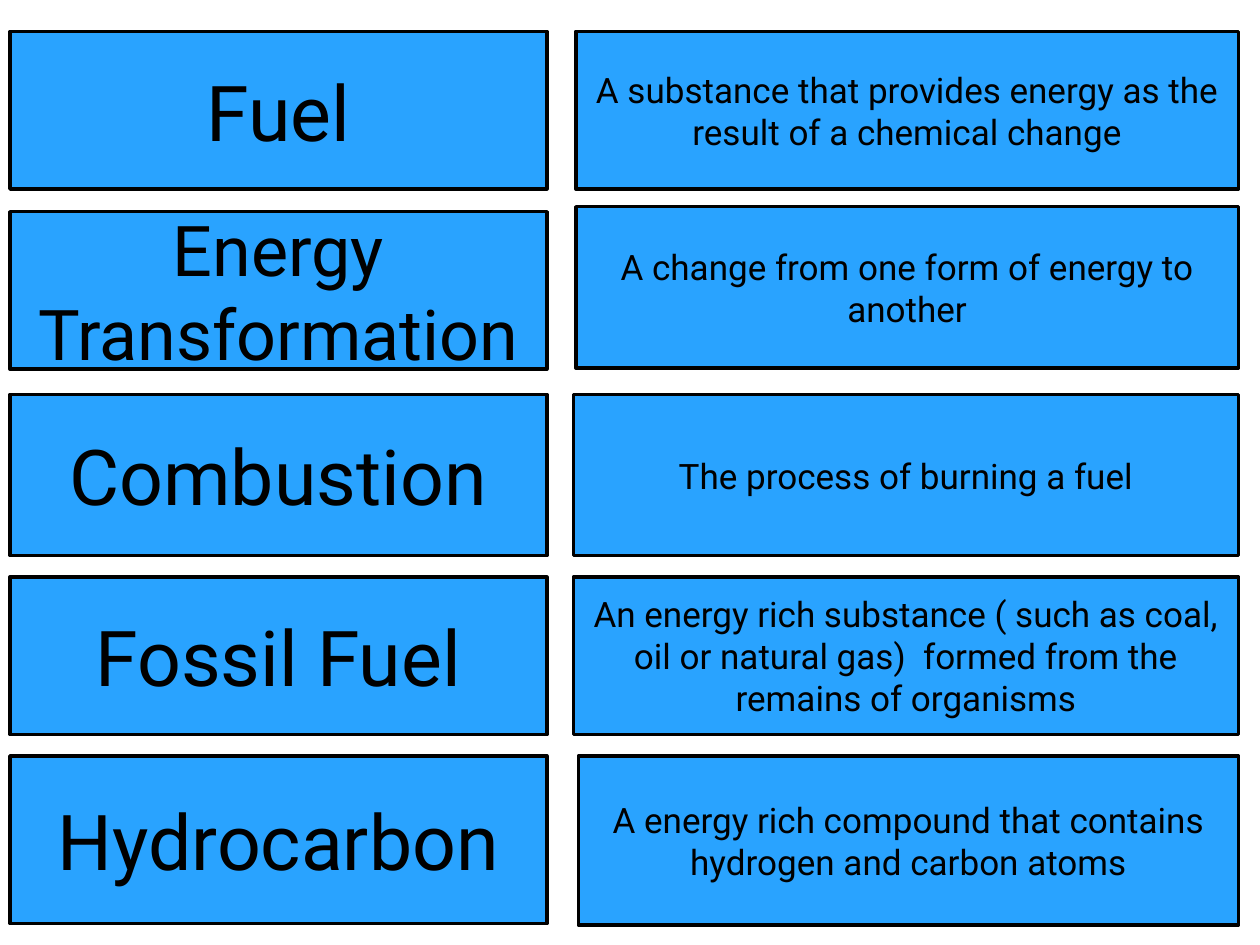
"""Build a slide of vocabulary cards pairing energy terms with definitions."""
from pptx import Presentation
from pptx.dml.color import RGBColor
from pptx.enum.shapes import MSO_SHAPE
from pptx.enum.text import MSO_ANCHOR, PP_ALIGN
from pptx.util import Inches, Pt

PROCESS = MSO_SHAPE.FLOWCHART_PROCESS
MIDDLE = MSO_ANCHOR.MIDDLE
CENTER = PP_ALIGN.CENTER
BLUE = RGBColor(0x29, 0xA3, 0xFF)
BLACK = RGBColor(0x00, 0x00, 0x00)
TERM_LEFT, TERM_WIDTH, RIGHT_EDGE = 0.08, 4.26, 9.83

# term, term size, term top, term height, definition, left, top, height
CARDS = [
    ("Fuel", 44, 0.25, 1.25,
     "A substance that provides energy as the result of a chemical change",
     4.57, 0.25, 1.25),
    ("Energy Transformation", 40, 1.68, 1.25,
     "A change from one form of energy to another",
     4.57, 1.64, 1.28),
    ("Combustion", 44, 3.13, 1.28,
     "The process of burning a fuel",
     4.55, 3.13, 1.28),
    ("Fossil Fuel", 44, 4.58, 1.25,
     "An energy rich substance ( such as coal, oil or natural gas)  "
     "formed from the remains of organisms",
     4.55, 4.58, 1.25),
    ("Hydrocarbon", 44, 6, 1.33,
     "A energy rich compound that contains hydrogen and carbon atoms",
     4.59, 6, 1.34),
]

prs = Presentation()
prs.slide_width = Inches(10)
prs.slide_height = Inches(7.5)
s = prs.slides.add_slide(prs.slide_layouts[6])


def add_card(text, *, left, top, width, height, size=20, font="Roboto", color=BLACK):
    sp = s.shapes.add_shape(
        PROCESS, Inches(left), Inches(top), Inches(width), Inches(height))
    sp.shadow.inherit = False
    sp.fill.solid()
    sp.fill.fore_color.rgb = BLUE
    sp.line.color.rgb = BLACK
    sp.line.width = Pt(2)
    tf = sp.text_frame
    tf.word_wrap = True
    tf.vertical_anchor = MIDDLE
    p = tf.paragraphs[0]
    p.alignment = CENTER
    r = p.add_run()
    r.text = text
    r.font.name = font
    r.font.size = Pt(size)
    r.font.color.rgb = color


for term, size, term_top, term_height, definition, left, top, height in CARDS:
    add_card(term, left=TERM_LEFT, top=term_top, width=TERM_WIDTH,
             height=term_height, size=size)
    add_card(definition, left=left, top=top, width=RIGHT_EDGE - left, height=height)

prs.save("out.pptx")
